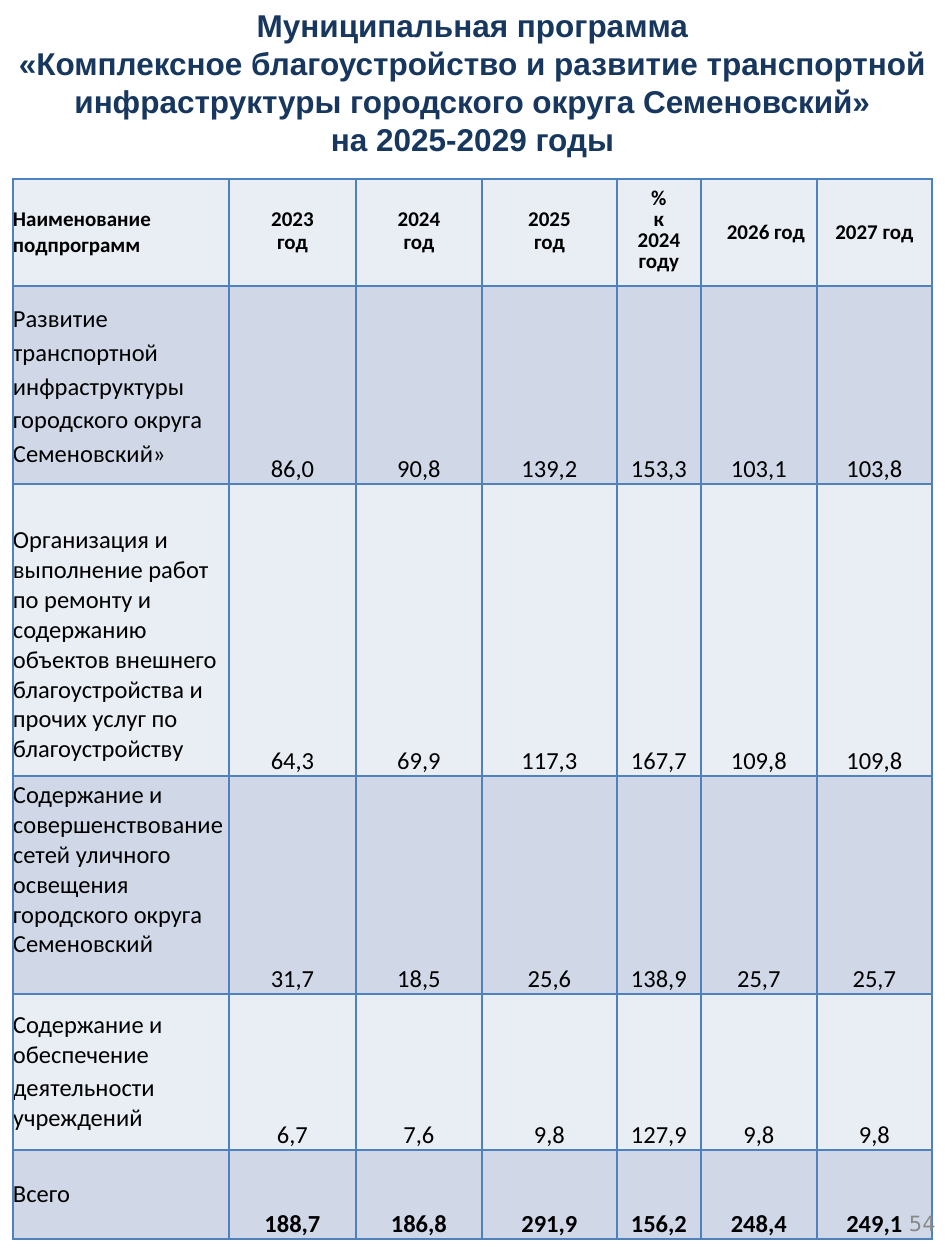
from dataclasses import dataclass

import lxml.etree
import pptx
import pptx.dml.color
import pptx.enum.text
import pptx.oxml.ns
import pptx.util

EMU_PER_PX = 914400 // 126
ALIGN = pptx.enum.text.PP_ALIGN
ANCHOR = pptx.enum.text.MSO_ANCHOR


@dataclass(frozen=True)
class Theme:
    """Colours, fonts and type sizes of the slide."""
    title_color: str = "17375E"
    text_color: str = "000000"
    number_color: str = "888888"
    border_color: str = "4F81BD"
    bands: tuple = ("E9EDF4", "D0D8E8")
    title_font: str = "Arial"
    table_font: str = "Calibri"
    number_font: str = "DejaVu Sans"
    title_size: int = 18
    header_size: int = 12
    body_size: int = 14
    number_size: int = 12


THEME = Theme()
TITLE = [
    "Муниципальная программа\v«Комплексное благоустройство и развитие транспортной "
    "инфраструктуры городского округа Семеновский»",
    "на 2025-2029 годы",
]
COLUMN_WIDTHS = [216, 127, 126, 135, 84, 116, 115]
ROW_HEIGHTS = [107, 198, 292, 218, 156, 89]
HEADER = [["Наименование подпрограмм"], ["2023", "год"], ["2024", "год"], ["2025", "год"],
          ["%", "к\v2024", "году"], ["2026 год"], ["2027 год"]]
PROGRAMS = [
    ["Развитие транспортной инфраструктуры городского округа Семеновский»"],
    ["Организация и выполнение работ по ремонту и содержанию объектов внешнего "
     "благоустройства и прочих услуг по благоустройству"],
    ["Содержание и совершенствование сетей уличного освещения", "городского округа Семеновский"],
    ["Содержание и обеспечение", "деятельности учреждений"],
    ["Всего"],
]
VALUES = [
    ["86,0", "90,8", "139,2", "153,3", "103,1", "103,8"],
    ["64,3", "69,9", "117,3", "167,7", "109,8", "109,8"],
    ["31,7", "18,5", "25,6", "138,9", "25,7", "25,7"],
    ["6,7", "7,6", "9,8", "127,9", "9,8", "9,8"],
    ["188,7", "186,8", "291,9", "156,2", "248,4", "249,1"],
]


def px(length):
    """Turn pixels into EMU."""
    return pptx.util.Emu(length * EMU_PER_PX)


def rgb(color):
    """Turn a hex string into a colour."""
    return pptx.dml.color.RGBColor.from_string(color)


def write(text_frame, lines, font, size, color, bold=False, align=ALIGN.LEFT):
    """Write one paragraph per line in a single style."""
    text_frame.text = "\n".join(lines)
    for paragraph in text_frame.paragraphs:
        paragraph.alignment = align
        paragraph.font.name = font
        paragraph.font.size = pptx.util.Pt(size)
        paragraph.font.bold = bold
        paragraph.font.color.rgb = rgb(color)


def set_margins(frame, left=0, top=0, right=0, bottom=0):
    """Set the inner margins of a cell or text frame."""
    frame.margin_left, frame.margin_top = px(left), px(top)
    frame.margin_right, frame.margin_bottom = px(right), px(bottom)


def style_cell(cell, fill):
    """Fill a cell and rule its four sides."""
    cell.fill.solid()
    cell.fill.fore_color.rgb = rgb(fill)
    properties = cell._tc.get_or_add_tcPr()
    qn = pptx.oxml.ns.qn
    for position, side in enumerate(("a:lnL", "a:lnR", "a:lnT", "a:lnB")):
        line = lxml.etree.Element(qn(side), w=str(pptx.util.Pt(1)))
        solid = lxml.etree.SubElement(line, qn("a:solidFill"))
        lxml.etree.SubElement(solid, qn("a:srgbClr"), val=THEME.border_color)
        properties.insert(position, line)


def write_header(table):
    """Write the column headings."""
    for column, lines in enumerate(HEADER):
        cell = table.cell(0, column)
        align = ALIGN.CENTER if column else ALIGN.LEFT
        write(cell.text_frame, lines, THEME.table_font, THEME.header_size,
              THEME.text_color, True, align)
        cell.vertical_anchor = ANCHOR.MIDDLE
        set_margins(cell)
        if len(lines) > 1:
            for paragraph in cell.text_frame.paragraphs:
                paragraph.line_spacing = pptx.util.Pt(13.2 if len(lines) == 2 else 12)
    right_aligned = table.cell(0, 5)
    right_aligned.text_frame.paragraphs[0].alignment = ALIGN.RIGHT
    set_margins(right_aligned, right=12)


def write_body(table):
    """Write the programme names and their yearly values."""
    for row, (name, values) in enumerate(zip(PROGRAMS, VALUES), 1):
        name_cell = table.cell(row, 0)
        write(name_cell.text_frame, name, THEME.table_font, THEME.body_size, THEME.text_color)
        name_cell.vertical_anchor = ANCHOR.MIDDLE
        set_margins(name_cell)
        for column, value in enumerate(values, 1):
            cell = table.cell(row, column)
            write(cell.text_frame, [value], THEME.table_font, THEME.body_size,
                  THEME.text_color, row == len(VALUES), ALIGN.CENTER)
            cell.vertical_anchor = ANCHOR.BOTTOM
            set_margins(cell, left=9, right=9)
    table.cell(1, 0).text_frame.paragraphs[0].line_spacing = 1.13
    set_margins(table.cell(2, 0), top=30)
    set_margins(table.cell(3, 0), bottom=30)
    table.cell(4, 0).text_frame.paragraphs[1].space_before = pptx.util.Pt(1.9)


def add_title(slide, left, top, width, height):
    """Place and format the slide title."""
    title = slide.shapes.title
    title.left, title.top, title.width, title.height = map(px, (left, top, width, height))
    frame = title.text_frame
    frame.word_wrap = True
    frame.auto_size = pptx.enum.text.MSO_AUTO_SIZE.NONE
    frame.vertical_anchor = ANCHOR.TOP
    write(frame, TITLE, THEME.title_font, THEME.title_size, THEME.title_color, True, ALIGN.CENTER)


def add_budget_table(slide, left, top):
    """Place the table of programme budgets."""
    frame = slide.shapes.add_table(len(ROW_HEIGHTS), len(COLUMN_WIDTHS), px(left), px(top),
                                   px(sum(COLUMN_WIDTHS)), px(sum(ROW_HEIGHTS)))
    table = frame.table
    table.first_row = table.horz_banding = False
    for column, width in zip(table.columns, COLUMN_WIDTHS):
        column.width = px(width)
    for index, (row, height) in enumerate(zip(table.rows, ROW_HEIGHTS)):
        row.height = px(height)
        for cell in row.cells:
            style_cell(cell, THEME.bands[index % 2])
    write_header(table)
    write_body(table)


def add_page_number(slide, left, top, width, height):
    """Place the page number."""
    frame = slide.shapes.add_textbox(*map(px, (left, top, width, height))).text_frame
    frame.word_wrap = True
    set_margins(frame, left=7)
    write(frame, ["54"], THEME.number_font, THEME.number_size, THEME.number_color)


def main():
    """Build and save the presentation."""
    presentation = pptx.Presentation()
    presentation.slide_width, presentation.slide_height = px(945), px(1260)
    slide = presentation.slides.add_slide(presentation.slide_layouts[5])
    add_title(slide, 0, 0, 945, 165)
    add_budget_table(slide, 13, 179)
    add_page_number(slide, 902, 1211, 39, 31)
    presentation.save("out.pptx")


if __name__ == "__main__":
    main()
